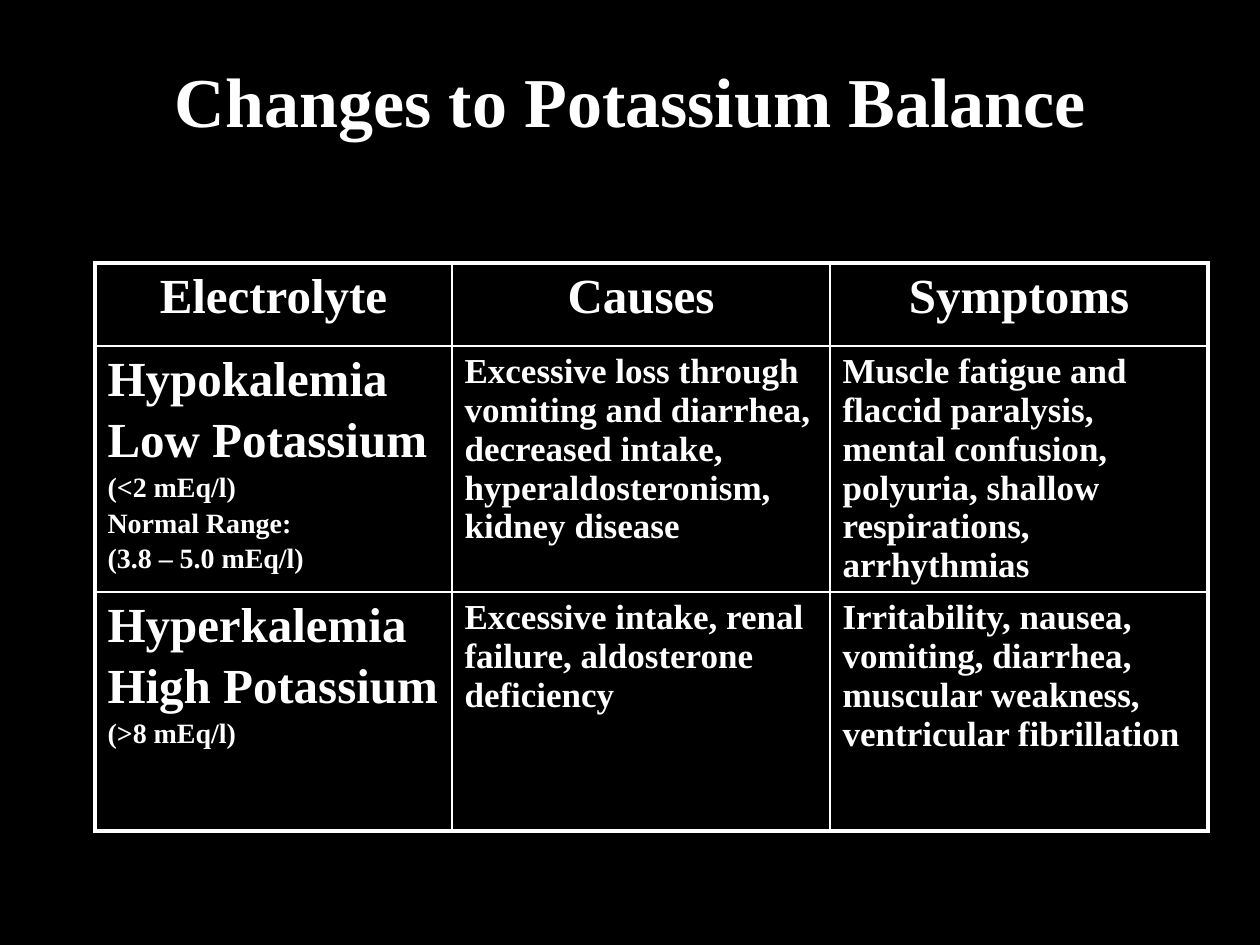
import pptx
import pptx.dml.color
import pptx.enum.text
import pptx.oxml
import pptx.oxml.ns
import pptx.util

PX = pptx.util.Inches(1) / 126
HUES = {"back": "000000", "ink": "FFFFFF"}
FACE = "Times New Roman"
ALIGN = pptx.enum.text.PP_ALIGN
MID = pptx.enum.text.MSO_ANCHOR.MIDDLE

COLS = [357, 378, 378]
ROWS = [83, 246, 239]
# Each cell is a list of (text, point size) paragraphs
CELLS = [
    [[("Electrolyte", 28)], [("Causes", 28)], [("Symptoms", 28)]],
    [
        [("Hypokalemia", 28), ("Low Potassium", 28), ("(<2 mEq/l)", 16),
         ("Normal Range:", 16), ("(3.8 – 5.0 mEq/l)", 16)],
        [("Excessive loss through vomiting and diarrhea, decreased intake, "
          "hyperaldosteronism, kidney disease", 20)],
        [("Muscle fatigue and flaccid paralysis, mental confusion, polyuria, "
          "shallow respirations, arrhythmias", 20)],
    ],
    [
        [("Hyperkalemia", 28), ("High Potassium", 28), ("(>8 mEq/l)", 16)],
        [("Excessive intake, renal failure, aldosterone deficiency", 20)],
        [("Irritability, nausea, vomiting, diarrhea, muscular weakness, "
          "ventricular fibrillation", 20)],
    ],
]


def px(num):
    return pptx.util.Emu(round(num * PX))


def hue(name):
    return pptx.dml.color.RGBColor.from_string(HUES[name])


def paint(fill, name):
    fill.solid()
    fill.fore_color.rgb = hue(name)


def style(part, form):
    for key, val in form.items():
        setattr(part, key, val)


def write(para, text, size, align):
    para.alignment = align
    run = para.add_run()
    run.text = text
    style(run.font, {"name": FACE, "size": pptx.util.Pt(size), "bold": True})
    run.font.color.rgb = hue("ink")


def edge(cell, side, width):
    line = pptx.oxml.parse_xml(
        f'<a:{side} {pptx.oxml.ns.nsdecls("a")} w="{pptx.util.Pt(width)}">'
        f'<a:solidFill><a:srgbClr val="{HUES["ink"]}"/></a:solidFill>'
        f'</a:{side}>')
    cell._tc.get_or_add_tcPr().append(line)


def add_title(slide, box):
    title = slide.shapes.title
    style(title, dict(zip(("left", "top", "width", "height"), map(px, box))))
    frame = title.text_frame
    style(frame, {"vertical_anchor": MID, "word_wrap": True})
    write(frame.paragraphs[0], "Changes to Potassium Balance", 40, ALIGN.CENTER)


def fill_cell(cell, row, col):
    # Borders come before the fill in the cell's XML: heavy outside, thin inside
    outer = {"lnL": col == 0, "lnR": col == len(COLS) - 1,
             "lnT": row == 0, "lnB": row == len(ROWS) - 1}
    for side, heavy in outer.items():
        edge(cell, side, 2.25 if heavy else 1)
    paint(cell.fill, "back")

    # Later paragraphs stand off in proportion to their size
    frame = cell.text_frame
    for spot, (text, size) in enumerate(CELLS[row][col]):
        para = frame.add_paragraph() if spot else frame.paragraphs[0]
        para.space_before = pptx.util.Pt(round(size * 0.155, 1) if spot else 0)
        write(para, text, size, ALIGN.LEFT if row else ALIGN.CENTER)


def add_grid(slide, left, top):
    box = map(px, (left, top, sum(COLS), sum(ROWS)))
    table = slide.shapes.add_table(len(ROWS), len(COLS), *box).table
    style(table, {"first_row": False, "horz_banding": False})
    for col, width in enumerate(COLS):
        table.columns[col].width = px(width)
    for row, height in enumerate(ROWS):
        table.rows[row].height = px(height)
        for col in range(len(COLS)):
            fill_cell(table.cell(row, col), row, col)


def main():
    deck = pptx.Presentation()
    style(deck, {"slide_width": px(1260), "slide_height": px(945)})
    slide = deck.slides.add_slide(deck.slide_layouts[5])
    paint(slide.background.fill, "back")
    add_title(slide, (95, 42, 1071, 116))
    add_grid(slide, 95, 263)
    deck.save("out.pptx")


if __name__ == "__main__":
    main()
